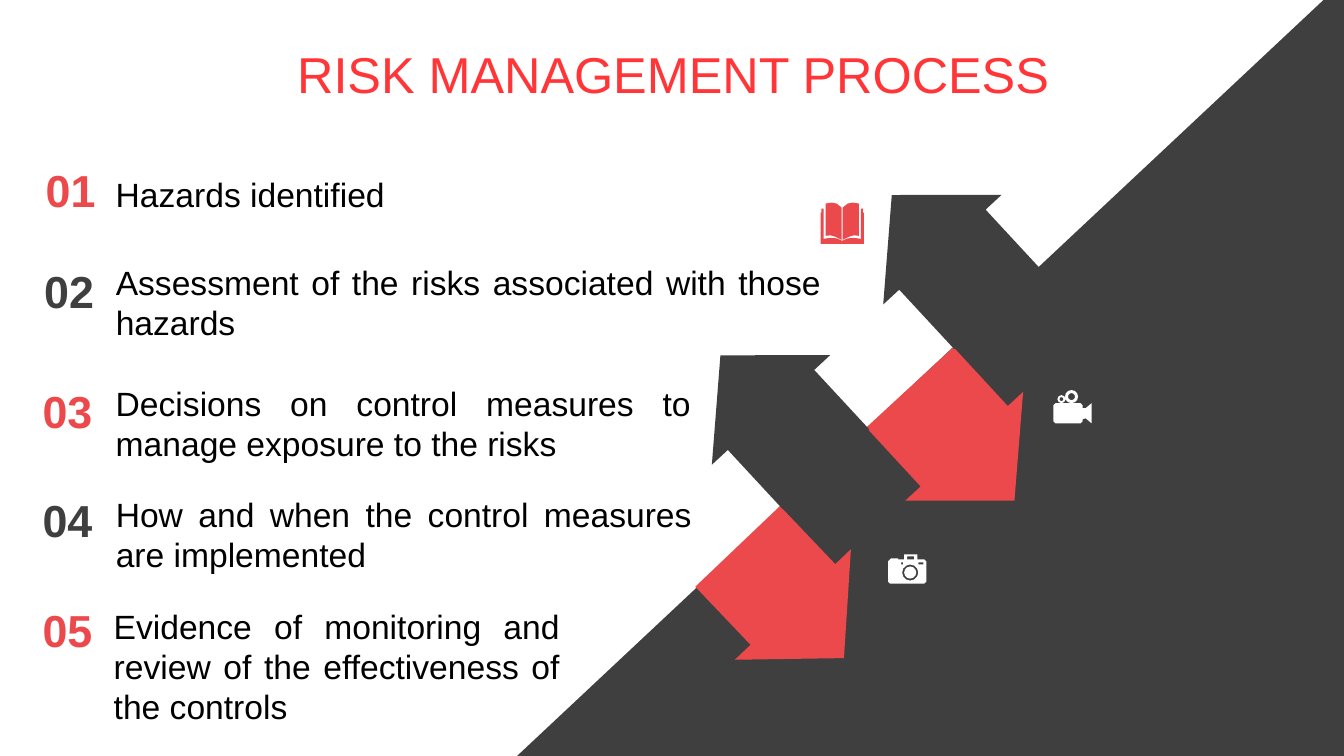
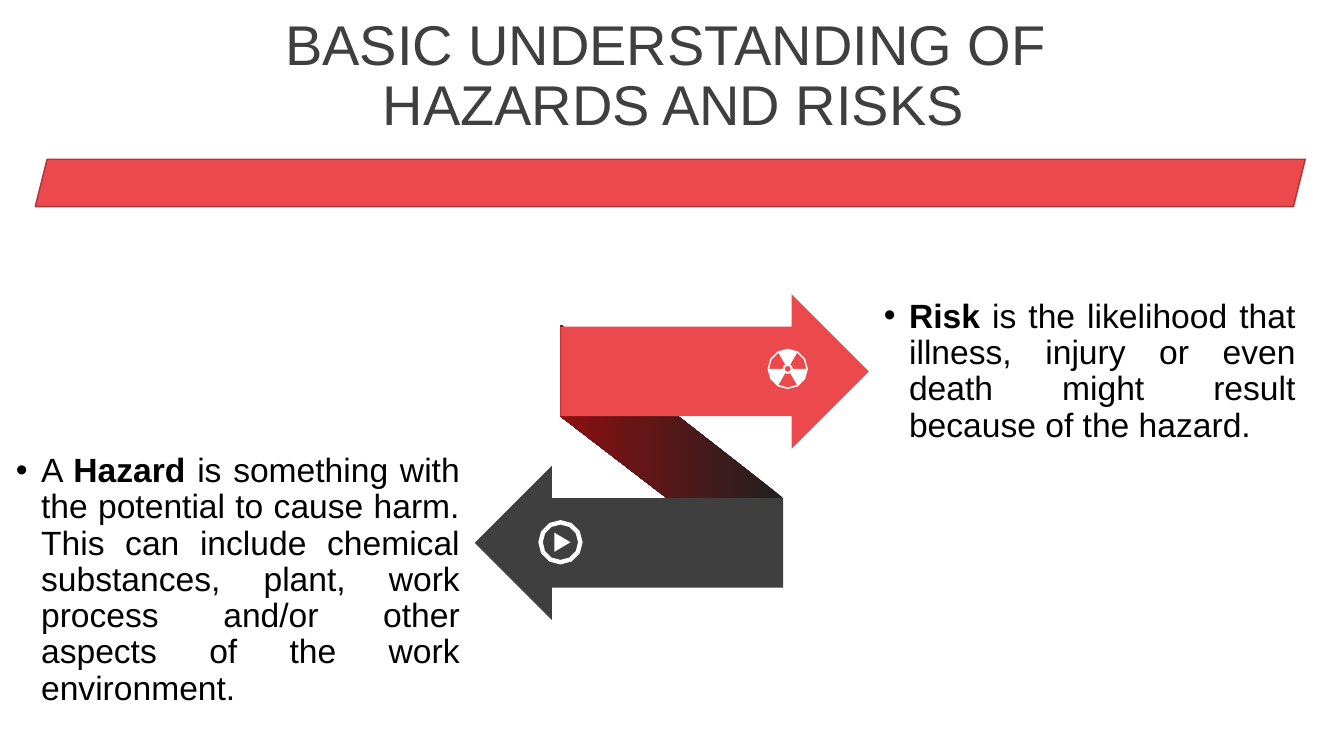
import math
from lxml import etree
from pptx import Presentation, util as u
from pptx.dml.color import RGBColor
from pptx.enum import shapes, text
from pptx.oxml import ns

COLS, ROWS = 133.33, 75
RED, DARK, WHITE, BLACK = "EB494B", "3F3F3F", "FFFFFF", "000000"
KIND = shapes.MSO_SHAPE
SIDE = text.PP_ALIGN
MID = text.MSO_ANCHOR.MIDDLE
TITLE = (3.5, 3.7, 126.6, 7.9)


def cell(n):
    return u.Inches(n / 10)


def hue(code):
    return RGBColor.from_string(code)


def paint(item, fill, line=None):
    item.shadow.inherit = False
    item.fill.solid()
    item.fill.fore_color.rgb = hue(fill)
    if line:
        item.line.color.rgb = hue(line)
        item.line.width = u.Pt(1)
    else:
        item.line.fill.background()
    return item


def block(page, kind, box, fill, line=None, turn=0, adj=()):
    item = page.shapes.add_shape(kind, *map(cell, box))
    item.rotation = turn
    for i, part in enumerate(adj):
        item.adjustments[i] = part
    return paint(item, fill, line)


def draw(page, fill, *loops):
    unit = 100
    grid = [[(x * unit, y * unit) for x, y in loop] for loop in loops]
    pen = page.shapes.build_freeform(*grid[0][0], scale=cell(1) / unit)
    for i, loop in enumerate(grid):
        if i:
            pen.move_to(*loop[0])
        pen.add_line_segments(loop[1:], close=True)
    return paint(pen.convert_to_shape(), fill)


def rect(x, y, w, h):
    return [(x, y), (x + w, y), (x + w, y + h), (x, y + h)]


def arc(x, y, r, start, end, step=30):
    turns = map(math.radians, range(start, end + 1, step))
    return [(x + r * math.cos(a), y + r * math.sin(a)) for a in turns]


def ring(x, y, r, sides=12):
    step = 360 // sides
    return arc(x, y, r, 0, 360 - step, step)


def flip(loop, axis):
    return [(2 * axis - x, y) for x, y in reversed(loop)]


def write(page, words, box, size=24, color=BLACK, bold=False, side=SIDE.JUSTIFY,
          anchor=text.MSO_ANCHOR.TOP, fill=None, grow=False, tight=False, dot=False):
    item = page.shapes.add_textbox(*map(cell, box))
    if fill:
        paint(item, fill)
    frame = item.text_frame
    frame.word_wrap = True
    frame.vertical_anchor = anchor
    frame.auto_size = text.MSO_AUTO_SIZE.SHAPE_TO_FIT_TEXT if grow else text.MSO_AUTO_SIZE.NONE
    para = frame.paragraphs[0]
    para.alignment = side
    if tight:
        para.line_spacing = 0.9
        para.space_before = u.Pt(10)
    if dot:
        props = para._p.get_or_add_pPr()
        props.set("marL", str(cell(2.5)))
        props.set("indent", str(cell(-2.5)))
        etree.SubElement(props, ns.qn("a:buFont")).set("typeface", "Arial")
        etree.SubElement(props, ns.qn("a:buChar")).set("char", "•")
    for row, line in enumerate(words.split("\n")):
        if row:
            para.add_line_break()
        for i, part in enumerate(line.split("*")):
            if part:
                run = para.add_run()
                run.text = part
                font = run.font
                font.name, font.size = "Arial", u.Pt(size)
                font.bold = bold or i % 2 == 1
                font.color.rgb = hue(color)


def title(page, words, size, color):
    write(page, words, TITLE, size=size, color=color, side=SIDE.CENTER,
          anchor=MID, tight=True)


def camera(page):
    body = [(88.1, 55.7), (88.3, 55.5), (88.4, 55.4), (89.1, 55.4),
            (89.1, 55.5), (89.7, 55.5), (89.7, 55), (91, 55), (91, 55.5),
            (91.7, 55.5), (91.9, 55.7), (91.9, 57.7), (91.7, 57.9),
            (88.3, 57.9), (88.1, 57.7)]
    draw(page, WHITE, body, rect(90, 55.2, 0.7, 0.3), rect(89.4, 55.8, 0.2, 0.2),
         rect(91.1, 55.8, 0.5, 0.2), ring(90.3, 56.8, 0.8), ring(90.3, 56.8, 0.6))


def video(page):
    body = [(104.5, 40.2), (104.7, 40), (107.2, 40), (107.4, 40.2), (107.4, 40.5),
            (107.7, 40.5), (108.3, 40), (108.3, 42), (107.7, 41.5), (107.4, 41.6),
            (107.4, 41.8), (107.2, 42), (104.7, 42), (104.5, 41.8)]
    draw(page, WHITE, body, ring(106.3, 39.35, 0.65), ring(106.3, 39.35, 0.35),
         ring(105.3, 39.6, 0.4, 8), ring(105.3, 39.6, 0.2, 8))


def book(page):
    mid = 83.55
    leaf = [(81.9, 20.2), (82.5, 20.1), (83, 20.2), (83.5, 20.6), (83.5, 23.8),
            (82.9, 23.5), (82.4, 23.35), (81.9, 23.4)]
    half = [(81.4, 24.2), (81.4, 21.1), (81.5, 21.1), (81.5, 20.7), (81.7, 20.7),
            (81.7, 23.7), (82.4, 23.6), (83, 23.65), (mid, 23.9)]
    draw(page, RED, half + flip(half, mid), leaf, flip(leaf, mid))


def atom(page):
    x, y = 78.15, 36.6
    fans = [arc(x, y, 1.85, a, a + 60) + arc(x, y, 0.5, a, a + 60)[::-1]
            for a in (60, 180, 300)]
    draw(page, WHITE, ring(x, y, 2), ring(x, y, 0.3, 8), *fans)


def play(page):
    x, y = 55.6, 53.8
    draw(page, WHITE, ring(x, y, 2.2), ring(x, y, 1.75),
         [(x - 0.6, y - 0.95), (x + 1, y), (x - 0.6, y + 0.95)])


def process(page):
    title(page, "RISK MANAGEMENT PROCESS", 36, "FF3537")
    draw(page, DARK, [(131.3, 0), (COLS, 0), (COLS, ROWS), (51.3, ROWS)])
    for kind, x, y, w, h, turn, neck, fill in (
            (KIND.RIGHT_ARROW, 87.8, 36.1, 15.3, 15.9, 47.3, 0.74, RED),
            (KIND.RIGHT_ARROW, 70.8, 51.8, 15.3, 15.9, 46.4, 0.73, RED),
            (KIND.LEFT_ARROW, 69, 32.9, 15.4, 16, 47.2, 0.73, DARK),
            (KIND.LEFT_ARROW, 86, 17, 15.4, 16, 47.2, 0.73, DARK)):
        block(page, kind, (x, y, w, h), fill, turn=turn, adj=(neck, 0.48))
    steps = (
        (3.2, 15.6, 7.6, 10.5, 16.8, 60.7, 5, "Hazards identified"),
        (3.2, 25.6, 7.3, 10.5, 25.5, 71.9, 9.1,
         "Assessment of the risks associated with those hazards"),
        (2.9, 37.5, 7.6, 10.5, 37.5, 59, 9.1,
         "Decisions on control measures to manage exposure to the risks"),
        (2.9, 48.3, 7.6, 10.5, 48.5, 59.1, 9.1,
         "How and when the control measures are implemented"),
        (2.9, 59.3, 7.6, 10.3, 59.6, 46.2, 13.1,
         "Evidence of monitoring and review of the effectiveness of the controls"))
    for i, (left, top, wide, x, y, w, h, words) in enumerate(steps):
        write(page, f"{i + 1:02}", (left, top, wide, 6.4), size=32, bold=True,
              color=(RED, DARK)[i % 2], side=SIDE.CENTER, anchor=MID,
              fill=WHITE, grow=True)
        write(page, words, (x, y, w, h), grow=True)
    for icon in (camera, video, book):
        icon(page)


def basics(page):
    title(page, "BASIC UNDERSTANDING OF \nHAZARDS AND RISKS", 40, DARK)
    fold = draw(page, DARK, [(55.6, 32.2), (77.7, 49.4), (77.7, 58.3), (55.6, 41.3)])
    fold.fill.gradient()
    fold.fill.gradient_angle = 180
    for stop, code in zip(fold.fill.gradient_stops, ("202020", "8B0F11")):
        stop.color.rgb = hue(code)
    for x, y, turn, fill in ((55.6, 29.2, 0, RED), (47.1, 46.2, 180, DARK)):
        block(page, KIND.RIGHT_ARROW, (x, y, 30.6, 15.3), fill, turn=turn, adj=(0.58, 0.5))
    atom(page)
    play(page)
    for words, box in (
            ("A *Hazard *is something with the potential to cause harm. This can include "
             "chemical substances, plant, work process and/or other aspects of the work "
             "environment.", (0.6, 44.5, 46, 28)),
            ("*Risk *is the likelihood that illness, injury or even death might result "
             "because of the hazard.", (86.7, 29.2, 42.8, 28))):
        write(page, words, box, tight=True, dot=True)
    block(page, KIND.PARALLELOGRAM, (3.5, 15.8, 126, 4.7), RED, line="AE3637")


def main():
    deck = Presentation()
    deck.slide_width, deck.slide_height = cell(COLS), cell(ROWS)
    for build in (process, basics):
        build(deck.slides.add_slide(deck.slide_layouts[6]))
    deck.save("out.pptx")


if __name__ == "__main__":
    main()
